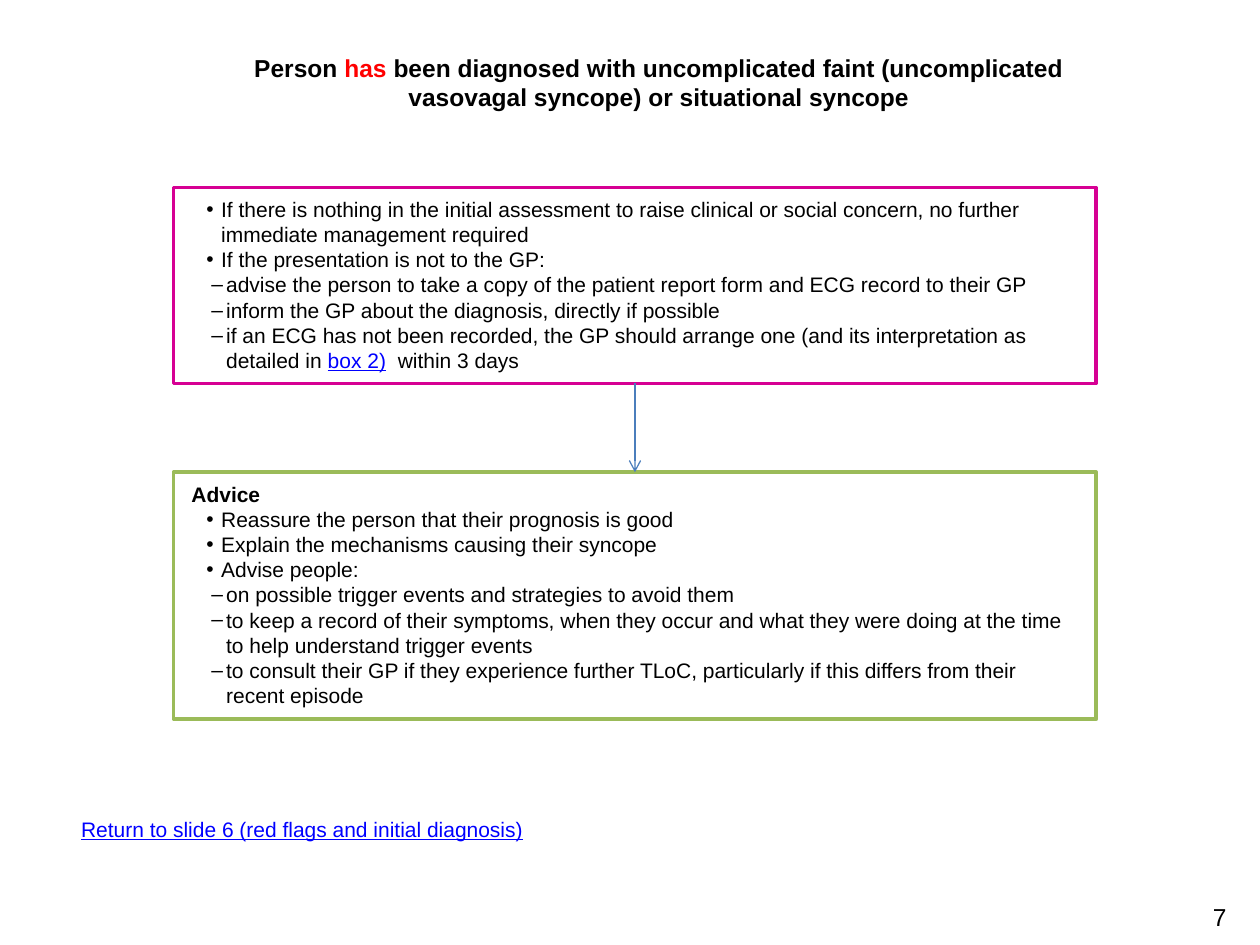
from lxml.etree import SubElement
from pptx import Presentation
from pptx.dml.color import RGBColor
from pptx.enum.shapes import MSO_CONNECTOR, MSO_SHAPE
from pptx.enum.text import MSO_ANCHOR, PP_ALIGN
from pptx.oxml.ns import qn
from pptx.util import Cm, Pt

BLACK, WHITE, RED, LINK = "000000", "FFFFFF", "FF0000", "0000FF"
MAGENTA, GREEN, BLUE = "D60093", "9BBB59", "4B7EBC"
BOX_LEFT, BOX_WIDTH = 3.5, 18.6
INDENTS = {"•": 0.6, "–": 0.7}

MANAGEMENT = [
    ("•", "If there is nothing in the initial assessment to raise clinical or social concern, "
          "no further immediate management required"),
    ("•", "If the presentation is not to the GP:"),
    ("–", "advise the person to take a copy of the patient report form and ECG record to their GP"),
    ("–", "inform the GP about the diagnosis, directly if possible"),
    ("–", "if an ECG has not been recorded, the GP should arrange one "
          "(and its interpretation as detailed in ", "box 2)", "  within 3 days"),
]
ADVICE = [
    ("", "Advice"),
    ("•", "Reassure the person that their prognosis is good"),
    ("•", "Explain the mechanisms causing their syncope"),
    ("•", "Advise people:"),
    ("–", "on possible trigger events and strategies to avoid them"),
    ("–", "to keep a record of their symptoms, when they occur and what they were doing "
          "at the time to help understand trigger events"),
    ("–", "to consult their GP if they experience further TLoC, particularly if this "
          "differs from their recent episode"),
]


def rgb(value):
    return RGBColor.from_string(value)


def format_paragraph(paragraph, size, align=PP_ALIGN.LEFT, bold=False, color=BLACK):
    paragraph.alignment = align
    paragraph.line_spacing = Pt(round(size * 1.2, 1))
    paragraph.space_before = Pt(0)
    paragraph.font.name = "Arial"
    paragraph.font.size = Pt(size)
    paragraph.font.bold = bold
    paragraph.font.color.rgb = rgb(color)


def add_runs(paragraph, texts, accent, underline=False):
    for position, text in enumerate(texts):
        run = paragraph.add_run()
        run.text = text
        if position == 1:
            run.font.color.rgb = rgb(accent)
            run.font.underline = underline or None


def set_bullet(paragraph, mark):
    properties = paragraph._p.get_or_add_pPr()
    properties.set("marL", str(Cm(INDENTS[mark])))
    properties.set("indent", str(Cm(-0.3)))
    SubElement(properties, qn("a:buFont"), typeface="Arial")
    SubElement(properties, qn("a:buChar"), char=mark)


def set_title(slide):
    title = slide.shapes.title
    title.left, title.top, title.width, title.height = Cm(4.09), Cm(0.94), Cm(18.39), Cm(1.45)
    frame = title.text_frame
    frame.word_wrap = True
    frame.vertical_anchor = MSO_ANCHOR.TOP
    heading = frame.paragraphs[0]
    format_paragraph(heading, 14, PP_ALIGN.CENTER, bold=True)
    add_runs(heading, ("Person ", "has ", "been diagnosed with uncomplicated faint "
                       "(uncomplicated vasovagal syncope) or situational syncope"), RED)


def add_step(slide, top, height, border, items):
    step = slide.shapes.add_shape(
        MSO_SHAPE.RECTANGLE, Cm(BOX_LEFT), Cm(top), Cm(BOX_WIDTH), Cm(height))
    step.shadow.inherit = False
    step.fill.solid()
    step.fill.fore_color.rgb = rgb(WHITE)
    step.line.color.rgb = rgb(border)
    step.line.width = Pt(2)
    frame = step.text_frame
    frame.word_wrap = True
    frame.vertical_anchor = MSO_ANCHOR.TOP
    frame.margin_left = frame.margin_right = Cm(0.36)
    frame.margin_top = frame.margin_bottom = Cm(0.18)
    for position, (mark, *texts) in enumerate(items):
        paragraph = frame.add_paragraph() if position else frame.paragraphs[0]
        format_paragraph(paragraph, 12, bold=not mark)
        add_runs(paragraph, texts, LINK, underline=True)
        if mark:
            set_bullet(paragraph, mark)
    return step


def add_arrow(slide, source, target):
    arrow = slide.shapes.add_connector(MSO_CONNECTOR.STRAIGHT, 0, 0, 0, 0)
    arrow.begin_connect(source, 2)
    arrow.end_connect(target, 0)
    arrow.line.color.rgb = rgb(BLUE)
    arrow.line.width = Pt(0.75)
    SubElement(arrow.line._get_or_add_ln(), qn("a:tailEnd"), type="arrow")
    SubElement(arrow._element.spPr, qn("a:effectLst"))


def add_label(slide, left, top, width, height, text, size, align, color=BLACK, underline=None):
    label = slide.shapes.add_textbox(Cm(left), Cm(top), Cm(width), Cm(height))
    label.text_frame.word_wrap = True
    paragraph = label.text_frame.paragraphs[0]
    paragraph.text = text
    format_paragraph(paragraph, size, align, color=color)
    paragraph.runs[0].font.underline = underline


def main():
    presentation = Presentation()
    presentation.slide_width, presentation.slide_height = Cm(25.4), Cm(19.05)
    slide = presentation.slides.add_slide(presentation.slide_layouts[5])
    set_title(slide)
    management = add_step(slide, 3.78, 3.95, MAGENTA, MANAGEMENT)
    advice = add_step(slide, 9.52, 4.98, GREEN, ADVICE)
    add_arrow(slide, management, advice)
    add_label(slide, 1.09, 16.33, 10.01, 0.76,
              "Return to slide 6 (red flags and initial diagnosis)",
              12, PP_ALIGN.CENTER, LINK, True)
    add_label(slide, 24.2, 18.06, 1.09, 0.86, "7", 14, PP_ALIGN.LEFT)
    presentation.save("out.pptx")


if __name__ == "__main__":
    main()
